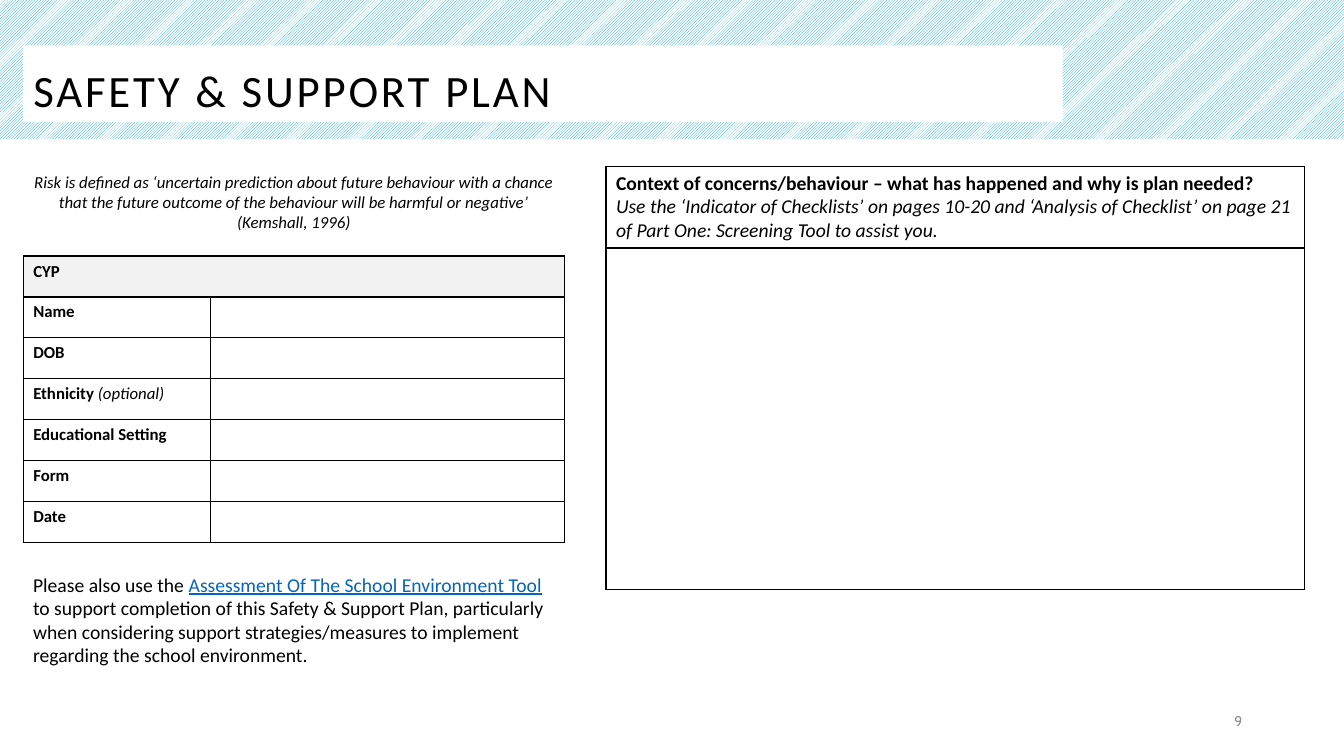
from pptx import Presentation
from pptx.util import Inches, Pt
from pptx.dml.color import RGBColor as RGB
from pptx.enum.dml import MSO_PATTERN as PAT
from pptx.enum.shapes import MSO_SHAPE as SHP
from pptx.enum.text import MSO_ANCHOR as ANC, PP_ALIGN as AL
from lxml.etree import SubElement as Sub

HUES = {"ink": "000000", "sky": "00A4E2", "paper": "FFFFFF",
        "shade": "F2F2F2", "link": "0563C1", "dim": "8C8C8C"}
NS = "{http://schemas.openxmlformats.org/drawingml/2006/main}"


class Deck:
    """Holds the style and the current slide."""

    def __init__(self):
        self.prs = Presentation()
        self.prs.slide_width = Inches(13.33)
        self.prs.slide_height = Inches(7.5)
        self.slide = self.prs.slides.add_slide(self.prs.slide_layouts[5])
        self.font = "Calibri"

    def hue(self, name):
        return RGB.from_string(HUES[name])

    def place(self, item, box):
        item.left, item.top, item.width, item.height = map(Inches, box)

    def put(self, para, runs, size, align=AL.LEFT, face=None, gap=0):
        para.alignment = align
        for text, style, tint in runs:
            run = para.add_run()
            run.text = text
            font = run.font
            font.name, font.size = face or self.font, Pt(size)
            font.bold, font.italic = "b" in style, "i" in style
            font.underline = "u" in style
            font.color.rgb = self.hue(tint)
            if gap:
                run._r.get_or_add_rPr().set("spc", str(int(gap * 100)))

    def band(self, box):
        band = self.slide.shapes.add_shape(SHP.RECTANGLE, *map(Inches, box))
        band.shadow.inherit = False
        band.fill.patterned()
        band.fill.pattern = PAT.LIGHT_UPWARD_DIAGONAL
        band.fill.fore_color.rgb = self.hue("sky")
        band.fill.back_color.rgb = self.hue("paper")
        band.line.fill.background()

    def title(self, text, box):
        head = self.slide.shapes.title
        head.element.getparent().append(head.element)
        self.place(head, box)
        head.fill.solid()
        head.fill.fore_color.rgb = self.hue("paper")
        frame = head.text_frame
        frame.word_wrap = True
        frame.vertical_anchor = ANC.BOTTOM
        para = frame.paragraphs[0]
        para.line_spacing = 0.9
        self.put(para, [(text, "", "ink")], 32, gap=2)

    def text(self, runs, box, size, anchor=ANC.TOP, **style):
        frame = self.slide.shapes.add_textbox(*map(Inches, box)).text_frame
        frame.word_wrap = True
        frame.vertical_anchor = anchor
        self.put(frame.paragraphs[0], runs, size, **style)

    def edge(self, cell, bare=""):
        props = cell._tc.get_or_add_tcPr()
        for side in "LRTB":
            line = Sub(props, f"{NS}ln{side}", w=str(Pt(1)))
            if side in bare:
                Sub(line, f"{NS}noFill")
            else:
                fill = Sub(line, f"{NS}solidFill")
                Sub(fill, f"{NS}srgbClr", val=HUES["ink"])

    def table(self, rows, spot, cols, highs, size, head=False):
        box = (*spot, sum(cols), sum(highs))
        grid = self.slide.shapes.add_table(
            len(highs), len(cols), *map(Inches, box)).table
        grid.first_row = grid.horz_banding = False
        for col, wide in zip(grid.columns, cols):
            col.width = Inches(wide)
        for row, high in zip(grid.rows, highs):
            row.height = Inches(high)
        for r, paras in enumerate(rows):
            for c in range(len(cols)):
                cell = grid.cell(r, c)
                top = head and r == 0
                self.edge(cell, "RL"[c] if top else "")
                if top:
                    cell.fill.solid()
                    cell.fill.fore_color.rgb = self.hue("shade")
                else:
                    cell.fill.background()
            frame = grid.cell(r, 0).text_frame
            for i, runs in enumerate(paras):
                para = frame.add_paragraph() if i else frame.paragraphs[0]
                self.put(para, runs, size)


def main():
    deck = Deck()
    left, wide = 0.23, 5.37
    deck.band((0, 0, 13.33, 1.38))
    deck.title("SAFETY & SUPPORT PLAN", (left, 0.45, 10.31, 0.76))
    deck.text([("Risk is defined as ‘uncertain prediction about future "
                "behaviour with a chance that the future outcome of the "
                "behaviour will be harmful or negative’ (Kemshall, 1996)",
                "i", "ink")], (left, 1.65, wide, 0.71), 12, align=AL.CENTER)

    names = ["CYP", "Name", "DOB", "Ethnicity ", "Educational Setting",
             "Form", "Date"]
    rows = [[[(name, "b", "ink")]] for name in names]
    rows[3][0].append(("(optional)", "i", "ink"))
    high = 2.84 / len(rows)
    deck.table(rows, (left, 2.54), (1.86, 3.51), [high] * len(rows), 12,
               head=True)

    deck.text([("Please also use the ", "", "ink"),
               ("Assessment Of The School Environment Tool ", "u", "link"),
               ("to support completion of this Safety & Support Plan, "
                "particularly when considering support strategies/measures "
                "to implement regarding the school environment.", "", "ink")],
              (left, 5.63, wide, 1.04), 14)

    ask = [[("Context of concerns/behaviour – what has happened and why is "
             "plan needed?", "b", "ink")],
           [("Use the ‘Indicator of Checklists’ on pages 10-20 and ‘Analysis "
             "of Checklist’ on page 21 of Part One: Screening Tool to assist "
             "you.", "i", "ink")]]
    deck.table([ask, []], (6.01, 1.65), (6.93,), (0.81, 3.39), 14)
    deck.text([("9", "", "dim")], (9.42, 6.95, 3, 0.4), 10, ANC.MIDDLE,
              align=AL.RIGHT, face="Cabin", gap=1.5)
    deck.prs.save("out.pptx")


if __name__ == "__main__":
    main()
